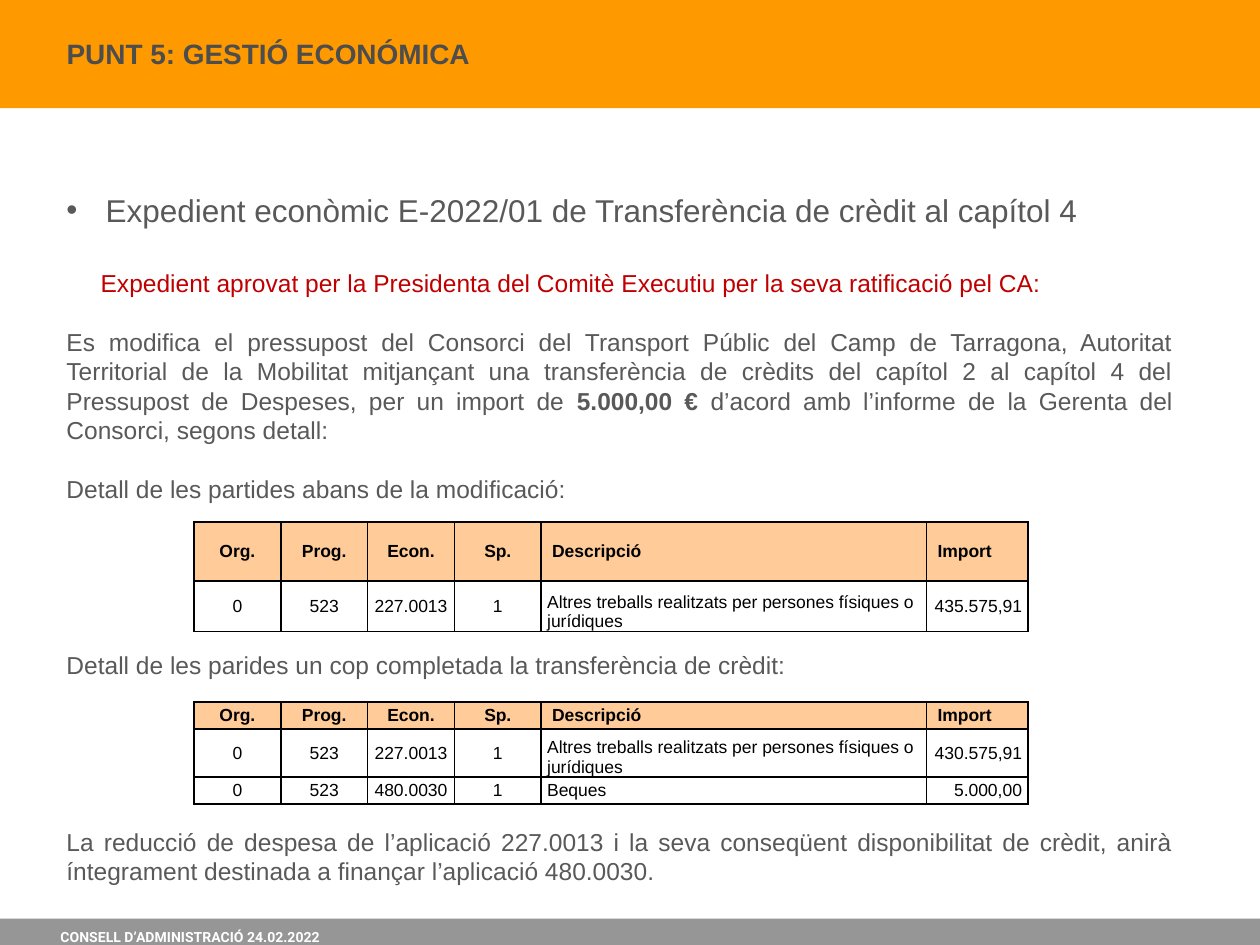
from dataclasses import dataclass
from lxml import etree
from pptx import Presentation
from pptx.dml.color import RGBColor
from pptx.enum.shapes import MSO_SHAPE
from pptx.enum.text import MSO_ANCHOR, PP_ALIGN
from pptx.oxml.ns import qn
from pptx.util import Cm, Pt

RECTANGLE = MSO_SHAPE.RECTANGLE
TOP, MIDDLE, BOTTOM = MSO_ANCHOR.TOP, MSO_ANCHOR.MIDDLE, MSO_ANCHOR.BOTTOM
LEFT, CENTER, RIGHT, JUSTIFY = PP_ALIGN.LEFT, PP_ALIGN.CENTER, PP_ALIGN.RIGHT, PP_ALIGN.JUSTIFY


@dataclass(frozen=True)
class Theme:
    orange: str = "FF9900"
    peach: str = "FFCC99"
    gray: str = "969696"
    title: str = "4D4D4D"
    text: str = "595959"
    red: str = "C00000"
    black: str = "000000"
    white: str = "FFFFFF"
    font: str = "Arial"
    footer_font: str = "Roboto"
    title_size: float = 16
    heading_size: float = 18
    body_size: float = 14
    table_size: float = 10
    footer_size: float = 8
    body_line: float = 16.8


THEME = Theme()


@dataclass(frozen=True)
class Span:
    text: str
    bold: bool = False


@dataclass(frozen=True)
class BodyParagraph:
    spans: tuple[Span, ...]
    lines_before: int = 0
    color: str = THEME.text
    indent: float = 0


@dataclass(frozen=True)
class BudgetRow:
    values: tuple[str, ...]
    height: float
    description_wraps: bool = False


@dataclass(frozen=True)
class BudgetTable:
    top: float
    header_height: float
    rows: tuple[BudgetRow, ...]


TEXT_LEFT, TEXT_WIDTH = 1.09, 22.81
TABLE_LEFT = 3.91
COLUMN_WIDTHS = (1.75, 1.75, 1.75, 1.75, 7.77, 2.04)
HEADERS = ("Org.", "Prog.", "Econ.", "Sp.", "Descripció", "Import")
HEADER_ALIGNMENTS = (CENTER,) * 4 + (LEFT,) * 2
VALUE_ALIGNMENTS = (CENTER,) * 4 + (LEFT, RIGHT)
DESCRIPTION = 4
CELL_MARGIN, HEADER_INDENT = 0.12, 0.22
WORKS = "Altres treballs realitzats per persones físiques o jurídiques"

BODY = (
    BodyParagraph((Span("Expedient aprovat per la Presidenta del Comitè Executiu "
                        "per la seva ratificació pel CA:"),), color=THEME.red, indent=0.69),
    BodyParagraph((
        Span("Es modifica el pressupost del Consorci del Transport Públic del Camp de Tarragona, "
             "Autoritat Territorial de la Mobilitat mitjançant una transferència de crèdits del "
             "capítol 2 al capítol 4 del Pressupost de Despeses, per un import de "),
        Span("5.000,00 €", bold=True),
        Span(" d’acord amb l’informe de la Gerenta del Consorci, segons detall:")), 1),
    BodyParagraph((Span("Detall de les partides abans de la modificació:"),), 1),
    BodyParagraph((Span("Detall de les parides un cop completada la transferència de crèdit:"),), 5),
    BodyParagraph((Span("La reducció de despesa de l’aplicació 227.0013 i la seva conseqüent "
                        "disponibilitat de crèdit, anirà íntegrament destinada a finançar "
                        "l’aplicació 480.0030."),), 5),
)

TABLES = (
    BudgetTable(10.52, 1.19, (
        BudgetRow(("0", "523", "227.0013", "1", WORKS, "435.575,91"), 1.02, True),)),
    BudgetTable(14.15, 0.55, (
        BudgetRow(("0", "523", "227.0013", "1", WORKS, "430.575,91"), 0.96, True),
        BudgetRow(("0", "523", "480.0030", "1", "Beques", "5.000,00"), 0.55))),
)


def add_run(paragraph, text: str, size: float, color: str,
            bold: bool = False, font: str = THEME.font) -> None:
    run = paragraph.add_run()
    run.text = text
    run.font.name = font
    run.font.size = Pt(size)
    run.font.bold = bold
    run.font.color.rgb = RGBColor.from_string(color)


def set_indent(paragraph, left: float, first_line: float = 0) -> None:
    properties = paragraph._p.get_or_add_pPr()
    properties.set("marL", str(Cm(left)))
    properties.set("indent", str(Cm(first_line)))


def add_band(slide, left: float, top: float, width: float, height: float, color: str) -> None:
    band = slide.shapes.add_shape(RECTANGLE, Cm(left), Cm(top), Cm(width), Cm(height))
    band.shadow.inherit = False
    band.fill.solid()
    band.fill.fore_color.rgb = RGBColor.from_string(color)
    band.line.fill.background()


def add_text_frame(slide, left: float, top: float, width: float, height: float):
    frame = slide.shapes.add_textbox(Cm(left), Cm(top), Cm(width), Cm(height)).text_frame
    frame.word_wrap = True
    return frame


def place_title(slide, text: str) -> None:
    """Fill the title placeholder and bring it in front of the header band."""
    title = slide.shapes.title
    title.left, title.top, title.width, title.height = Cm(TEXT_LEFT), Cm(0.69), Cm(23.39), Cm(1.5)
    title.text_frame.vertical_anchor = TOP
    paragraph = title.text_frame.paragraphs[0]
    paragraph.alignment = JUSTIFY
    paragraph.line_spacing = 0.9
    add_run(paragraph, text, THEME.title_size, THEME.title, bold=True)
    slide.shapes._spTree.append(title._element)


def add_heading(slide, text: str) -> None:
    paragraph = add_text_frame(slide, TEXT_LEFT, 3.73, TEXT_WIDTH, 1.02).paragraphs[0]
    set_indent(paragraph, 0.79, -0.79)
    properties = paragraph._p.get_or_add_pPr()
    etree.SubElement(properties, qn("a:buFont")).set("typeface", THEME.font)
    etree.SubElement(properties, qn("a:buChar")).set("char", "•")
    paragraph.alignment = JUSTIFY
    add_run(paragraph, text, THEME.heading_size, THEME.text)


def add_body(slide, contents: tuple[BodyParagraph, ...]) -> None:
    frame = add_text_frame(slide, TEXT_LEFT, 5.28, TEXT_WIDTH, 13)
    for index, content in enumerate(contents):
        paragraph = frame.add_paragraph() if index else frame.paragraphs[0]
        paragraph.alignment = JUSTIFY
        paragraph.line_spacing = Pt(THEME.body_line)
        if content.lines_before:
            paragraph.space_before = Pt(content.lines_before * THEME.body_line)
        set_indent(paragraph, content.indent)
        for span in content.spans:
            add_run(paragraph, span.text, THEME.body_size, content.color, span.bold)


def set_borders(cell) -> None:
    """Put the four lines ahead of the fill, as the schema orders them."""
    properties = cell._tc.get_or_add_tcPr()
    for index, side in enumerate(("lnL", "lnR", "lnT", "lnB")):
        line = etree.Element(qn(f"a:{side}"), w=str(Pt(1)))
        fill = etree.SubElement(line, qn("a:solidFill"))
        etree.SubElement(fill, qn("a:srgbClr")).set("val", THEME.black)
        properties.insert(index, line)


def fill_cell(cell, text: str, alignment, anchor, header: bool) -> None:
    indented = header and alignment == LEFT
    cell.margin_left = Cm(HEADER_INDENT if indented else CELL_MARGIN)
    cell.margin_right = Cm(CELL_MARGIN)
    cell.margin_top = cell.margin_bottom = 0
    cell.vertical_anchor = anchor
    cell.fill.solid()
    cell.fill.fore_color.rgb = RGBColor.from_string(THEME.peach if header else THEME.white)
    set_borders(cell)
    paragraph = cell.text_frame.paragraphs[0]
    paragraph.alignment = alignment
    add_run(paragraph, text, THEME.table_size, THEME.black, bold=header)


def add_budget_table(slide, budget: BudgetTable) -> None:
    rows = (BudgetRow(HEADERS, budget.header_height),) + budget.rows
    table = slide.shapes.add_table(
        len(rows), len(HEADERS), Cm(TABLE_LEFT), Cm(budget.top),
        Cm(sum(COLUMN_WIDTHS)), Cm(sum(row.height for row in rows))).table
    for column, width in zip(table.columns, COLUMN_WIDTHS):
        column.width = Cm(width)
    for r, row in enumerate(rows):
        table.rows[r].height = Cm(row.height)
        alignments = VALUE_ALIGNMENTS if r else HEADER_ALIGNMENTS
        for c, (value, alignment) in enumerate(zip(row.values, alignments)):
            anchor = BOTTOM if row.description_wraps and c == DESCRIPTION else MIDDLE
            fill_cell(table.cell(r, c), value, alignment, anchor, header=r == 0)


def main() -> None:
    presentation = Presentation()
    presentation.slide_width, presentation.slide_height = Cm(25.4), Cm(19.05)
    slide = presentation.slides.add_slide(presentation.slide_layouts[5])
    add_band(slide, -0.1, 0, 25.5, 2.18, THEME.orange)
    add_band(slide, 0, 18.52, 25.4, 0.53, THEME.gray)
    footer = add_text_frame(slide, 0.97, 18.59, 14.6, 0.61)
    add_run(footer.paragraphs[0], "CONSELL D’ADMINISTRACIÓ 24.02.2022",
            THEME.footer_size, THEME.white, True, THEME.footer_font)
    place_title(slide, "PUNT 5: GESTIÓ ECONÓMICA")
    add_heading(slide, "Expedient econòmic E-2022/01 de Transferència de crèdit al capítol 4")
    add_body(slide, BODY)
    for budget in TABLES:
        add_budget_table(slide, budget)
    presentation.save("out.pptx")


if __name__ == "__main__":
    main()
